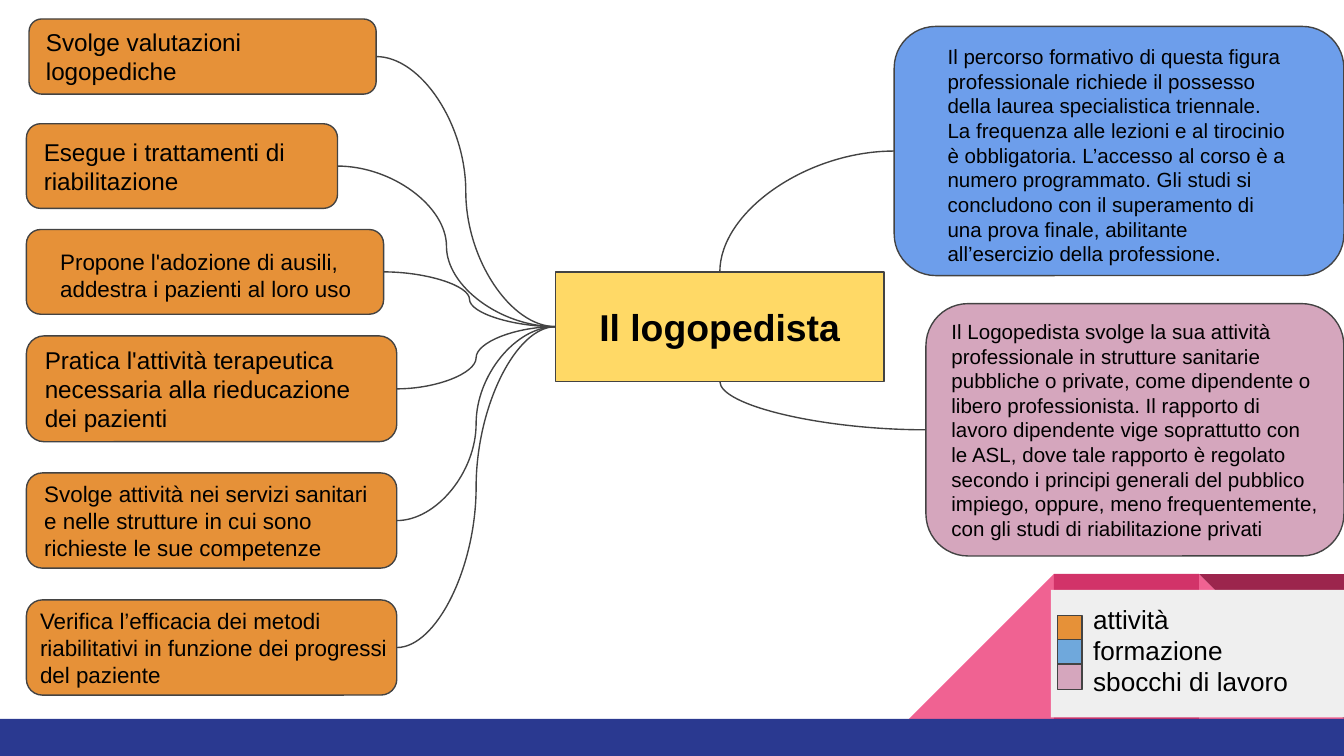
from dataclasses import dataclass
from typing import NamedTuple

from pptx import Presentation
from pptx.dml.color import RGBColor
from pptx.enum.shapes import MSO_CONNECTOR, MSO_SHAPE
from pptx.enum.text import MSO_ANCHOR, PP_ALIGN
from pptx.oxml.ns import qn
from pptx.util import Cm, Pt

RECTANGLE = MSO_SHAPE.RECTANGLE
ROUNDED = MSO_SHAPE.ROUNDED_RECTANGLE
TRIANGLE = MSO_SHAPE.RIGHT_TRIANGLE
CURVE = MSO_CONNECTOR.CURVE
MIDDLE, TOP_ANCHOR = MSO_ANCHOR.MIDDLE, MSO_ANCHOR.TOP
LEFT_ALIGN, CENTER = PP_ALIGN.LEFT, PP_ALIGN.CENTER
TOP, LEFT, BOTTOM, RIGHT = range(4)


@dataclass(frozen=True)
class Theme:
    font: str = "Arial"
    ink: str = "000000"
    outline: str = "434343"
    hub: str = "FFD966"
    activity: str = "E69138"
    training: str = "6D9EEB"
    training_key: str = "6FA8DC"
    careers: str = "D5A6BD"
    panel: str = "EFEFEF"
    pink: str = "F06292"
    magenta: str = "D23369"
    wine: str = "9C254D"
    band: str = "2A3990"
    title_size: int = 20
    legend_size: int = 14
    large_size: int = 13
    medium_size: int = 12
    small_size: int = 11
    line_width: float = 0.75
    line_height: float = 1.2


THEME = Theme()


class Area(NamedTuple):
    """Left, top, width and height in centimetres."""
    left: float
    top: float
    width: float
    height: float


class Insets(NamedTuple):
    left: float = 0.25
    top: float = 0.25
    right: float = 0.25
    bottom: float = 0.25


class Topic(NamedTuple):
    text: str
    area: Area
    size: int
    fill: str = THEME.activity
    insets: Insets = Insets()
    hub_side: int = LEFT


ACTIVITIES = [
    Topic("Svolge valutazioni logopediche",
          Area(0.55, 0.36, 6.56, 1.42), THEME.large_size),
    Topic("Esegue i trattamenti di riabilitazione",
          Area(0.5, 2.34, 5.88, 1.6), THEME.large_size),
    Topic("Propone l'adozione di ausili, addestra i pazienti al loro uso",
          Area(0.5, 4.34, 6.75, 1.6), THEME.medium_size,
          insets=Insets(0.56, 0.36, 0.34, 0.25)),
    Topic("Pratica l'attività terapeutica necessaria alla rieducazione dei pazienti",
          Area(0.5, 6.35, 7, 2), THEME.large_size),
    Topic("Svolge attività nei servizi sanitari e nelle strutture in cui sono "
          "richieste le sue competenze",
          Area(0.5, 8.94, 7, 1.8), THEME.medium_size),
    Topic("Verifica l’efficacia dei metodi riabilitativi in funzione dei "
          "progressi del paziente",
          Area(0.5, 11.34, 7, 1.8), THEME.medium_size,
          insets=Insets(left=0.17, right=0)),
]

PROFILES = [
    Topic("Il percorso formativo di questa figura professionale richiede il "
          "possesso della laurea specialistica triennale.\n"
          "La frequenza alle lezioni e al tirocinio è obbligatoria. L’accesso al "
          "corso è a numero programmato. Gli studi si concludono con il "
          "superamento di una prova finale, abilitante all’esercizio della "
          "professione.",
          Area(16.9, 0.5, 8.5, 4.71), THEME.small_size, THEME.training,
          Insets(0.78, 0.4, 0.76, 0.25), TOP),
    Topic("Il Logopedista svolge la sua attività professionale in strutture "
          "sanitarie pubbliche o private, come dipendente o libero "
          "professionista. Il rapporto di lavoro dipendente vige soprattutto con "
          "le ASL, dove tale rapporto è regolato secondo i principi generali del "
          "pubblico impiego, oppure, meno frequentemente, con gli studi di "
          "riabilitazione privati",
          Area(17.5, 5.74, 7.9, 4.77), THEME.small_size, THEME.careers,
          hub_side=BOTTOM),
]

LEGEND = {
    "attività": THEME.activity,
    "formazione": THEME.training_key,
    "sbocchi di lavoro": THEME.careers,
}


def add_box(page, area: Area, fill: str, kind=RECTANGLE, outlined: bool = True,
            rotation: float = 0):
    box = page.shapes.add_shape(kind, *(Cm(value) for value in area))
    box.shadow.inherit = False
    box.rotation = rotation
    box.fill.solid()
    box.fill.fore_color.rgb = RGBColor.from_string(fill)
    if outlined:
        box.line.color.rgb = RGBColor.from_string(THEME.outline)
        box.line.width = Pt(THEME.line_width)
    else:
        box.line.fill.background()
    return box


def write_text(box, paragraphs: list[str], *, size: int, bold: bool = False,
               align=LEFT_ALIGN, anchor=MIDDLE, insets: Insets = Insets()) -> None:
    frame = box.text_frame
    frame.word_wrap = True
    frame.vertical_anchor = anchor
    frame.margin_left, frame.margin_top = Cm(insets.left), Cm(insets.top)
    frame.margin_right, frame.margin_bottom = Cm(insets.right), Cm(insets.bottom)
    for index, text in enumerate(paragraphs):
        para = frame.add_paragraph() if index else frame.paragraphs[0]
        para.text = text
        para.alignment = align
        para.line_spacing = Pt(size * THEME.line_height)
        for span in para.runs:
            span.font.name = THEME.font
            span.font.size = Pt(size)
            span.font.bold = bold
            span.font.color.rgb = RGBColor.from_string(THEME.ink)


def add_curve(page, start, start_side: int, end, end_side: int,
              preset: str = "curvedConnector3") -> None:
    curve = page.shapes.add_connector(CURVE, 0, 0, 0, 0)
    curve.begin_connect(start, start_side)
    curve.end_connect(end, end_side)
    curve.line.color.rgb = RGBColor.from_string(THEME.outline)
    curve.line.width = Pt(THEME.line_width)
    properties = curve._element.spPr
    properties.find(qn("a:prstGeom")).set("prst", preset)
    properties.append(properties.makeelement(qn("a:effectLst"), {}))


def add_topic(page, topic: Topic):
    box = add_box(page, topic.area, topic.fill, ROUNDED)
    write_text(box, [topic.text], size=topic.size, insets=topic.insets)
    return box


def add_footer(page) -> None:
    side, top, right_edge = 2.74, 10.85, 25.4
    columns = [Area(right_edge - count * side, top, side, side) for count in (3, 2, 1)]
    add_box(page, columns[2], THEME.pink, TRIANGLE, outlined=False)
    add_box(page, columns[0], THEME.pink, TRIANGLE, outlined=False, rotation=270)
    add_box(page, columns[1], THEME.magenta, outlined=False)
    add_box(page, columns[2], THEME.wine, TRIANGLE, outlined=False, rotation=180)
    add_box(page, Area(0, top + side, right_edge, 0.7), THEME.band, outlined=False)


def add_legend(page) -> None:
    panel = add_box(page, Area(19.86, 11.15, 5.54, 2.41), THEME.panel, outlined=False)
    write_text(panel, list(LEGEND), size=THEME.legend_size, anchor=TOP_ANCHOR,
               insets=Insets(left=0.8))
    for row, color in enumerate(LEGEND.values()):
        add_box(page, Area(19.99, 11.63 + row * 0.46, 0.46, 0.48), color)


def main() -> None:
    deck = Presentation()
    deck.slide_width, deck.slide_height = Cm(25.4), Cm(14.29)
    page = deck.slides.add_slide(deck.slide_layouts[6])

    add_footer(page)
    hub = add_box(page, Area(10.5, 5.14, 6.21, 2.07), THEME.hub)
    write_text(hub, ["Il logopedista"], size=THEME.title_size, bold=True, align=CENTER)
    for topic in ACTIVITIES:
        add_curve(page, hub, topic.hub_side, add_topic(page, topic), RIGHT)
    for topic in PROFILES:
        add_curve(page, add_topic(page, topic), LEFT, hub, topic.hub_side,
                  "curvedConnector2")
    add_legend(page)
    deck.save("out.pptx")


if __name__ == "__main__":
    main()
